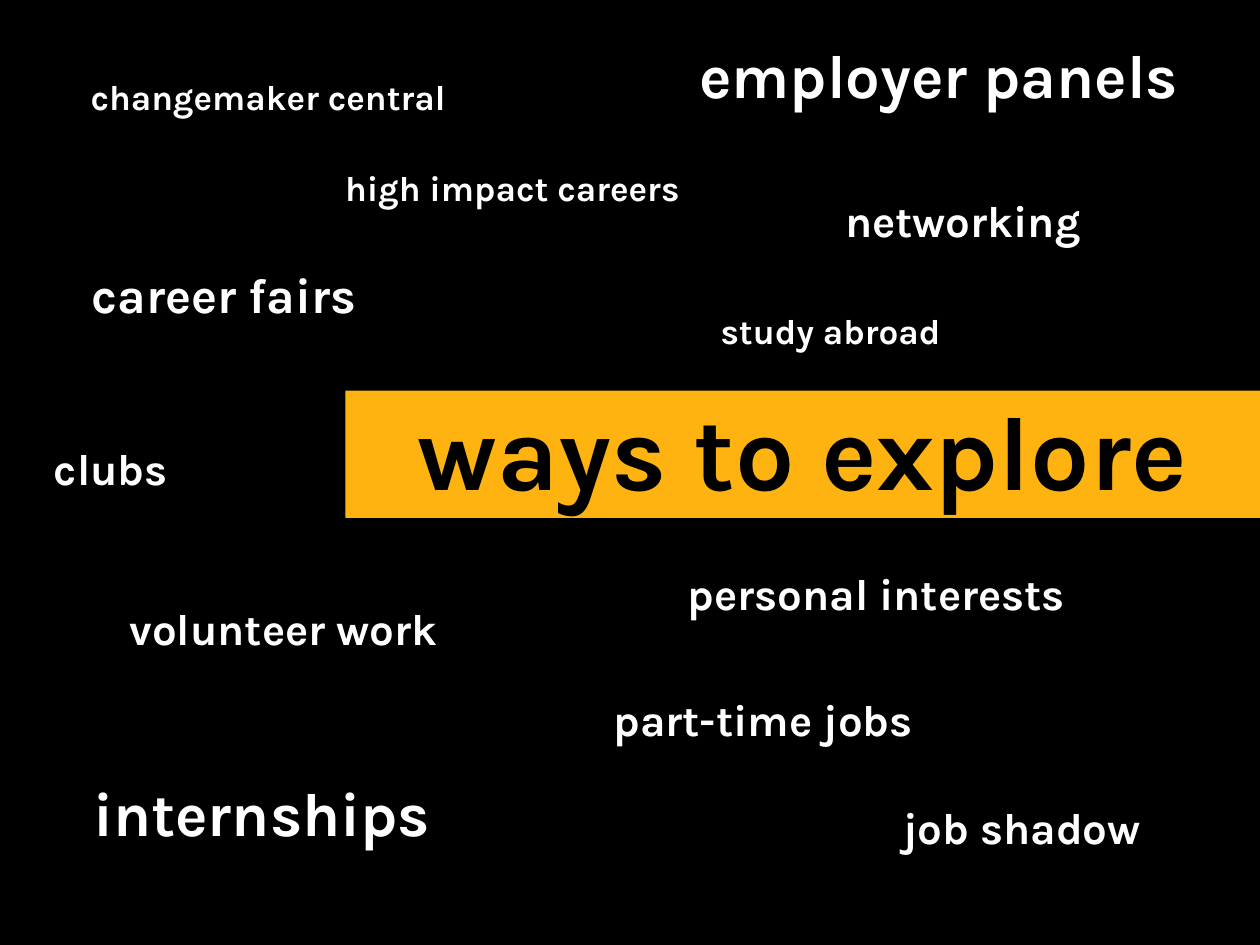
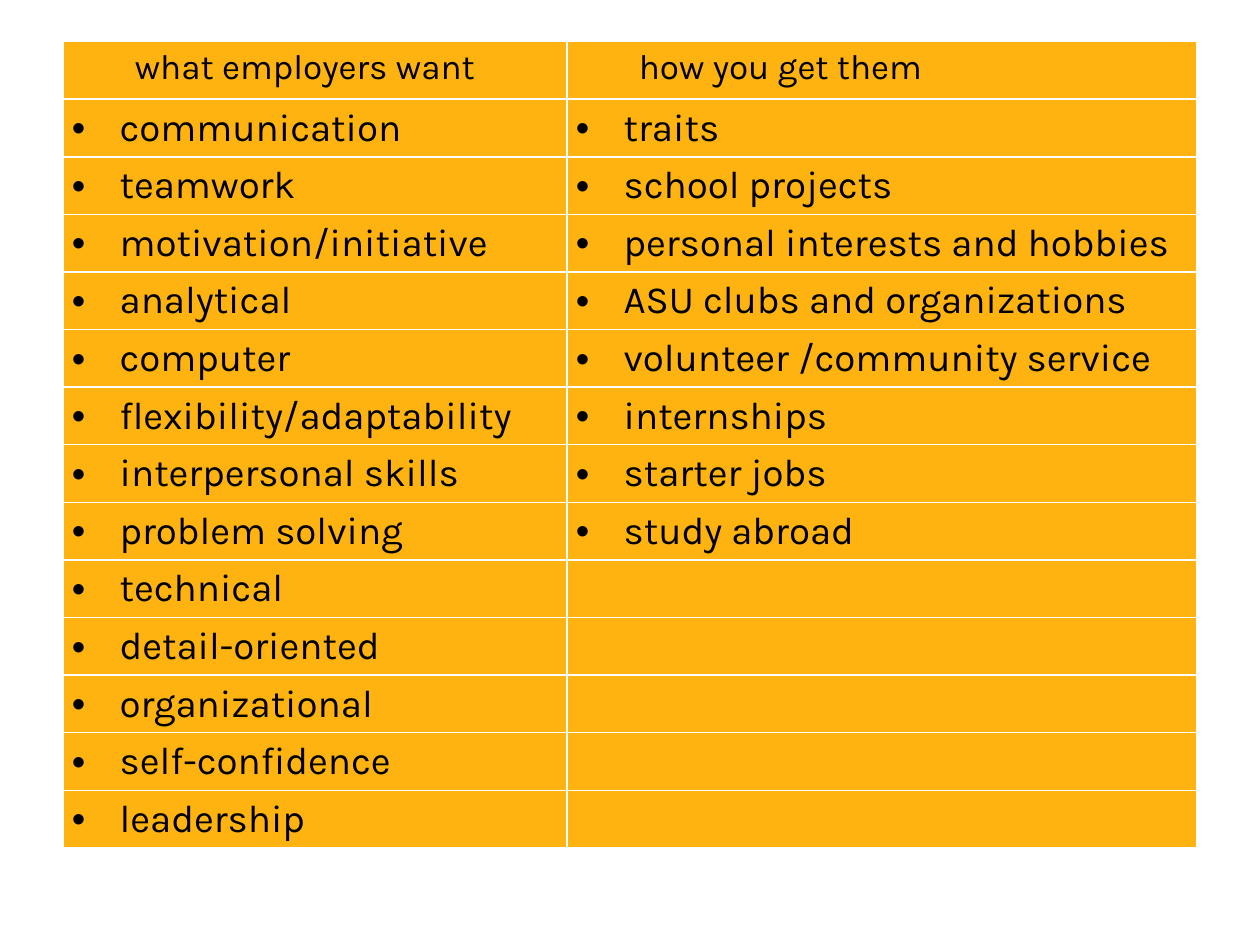
"""Build two slides: ways to explore careers, and the skills employers want."""
from itertools import zip_longest

from lxml import etree
from pptx import Presentation
from pptx.dml.color import RGBColor
from pptx.enum.text import MSO_AUTO_SIZE, PP_ALIGN
from pptx.oxml.ns import qn
from pptx.util import Inches, Pt

CENTER = PP_ALIGN.CENTER
GROW = MSO_AUTO_SIZE.SHAPE_TO_FIT_TEXT
FONT = "Karla"
COLORS = {"black": "000000", "white": "FFFFFF", "gold": "FFB310"}


def paint(fill, color):
    fill.solid()
    fill.fore_color.rgb = RGBColor.from_string(COLORS[color])


def add_run(para, text, size, color, bold=False):
    span = para.add_run()
    span.text = text
    span.font.name = FONT
    span.font.size = Pt(size)
    span.font.bold = bold
    span.font.color.rgb = RGBColor.from_string(COLORS[color])


deck = Presentation()
deck.slide_width = Inches(10)
deck.slide_height = Inches(7.5)

page = deck.slides.add_slide(deck.slide_layouts[5])
paint(page.background.fill, "black")

title = page.shapes.title
title.left, title.top = Inches(2.74), Inches(3.1)
title.width, title.height = Inches(7.26), Inches(1.01)
paint(title.fill, "gold")
title.text_frame.word_wrap = True
title.text_frame.auto_size = GROW
para = title.text_frame.paragraphs[0]
para.alignment = CENTER
para.line_spacing = Pt(65)
add_run(para, "ways to explore", 60, "black", bold=True)

box_heights = {20: 0.44, 25: 0.52, 28: 0.57, 35: 0.69}
ideas = [
    ("internships", 35, 0.64, 6.1, 2.93),
    ("volunteer work", 25, 0.93, 4.73, 2.93),
    ("employer panels", 35, 5.45, 0.25, 4.49),
    ("part-time jobs", 25, 4.77, 5.45, 2.93),
    ("networking", 25, 6.61, 1.49, 2.93),
    ("changemaker central", 20, 0.62, 0.55, 5.12),
    ("career fairs", 28, 0.63, 2.05, 4.69),
    ("clubs", 25, 0.33, 3.46, 2.2),
    ("study abroad", 20, 5.62, 2.41, 2.89),
    ("job shadow", 25, 7.07, 6.31, 2.93),
    ("personal interests", 25, 5.36, 4.45, 3.43),
    ("high impact careers", 20, 2.64, 1.27, 5.12),
]
for text, size, left, top, width in ideas:
    box = page.shapes.add_textbox(
        Inches(left), Inches(top), Inches(width), Inches(box_heights[size]))
    box.text_frame.word_wrap = True
    box.text_frame.auto_size = GROW
    add_run(box.text_frame.paragraphs[0], text, size, "white", bold=True)

page = deck.slides.add_slide(deck.slide_layouts[6])
skills = [
    "what employers want", "communication", "teamwork", "motivation/initiative",
    "analytical", "computer", "flexibility/adaptability", "interpersonal skills",
    "problem solving", "technical", "detail-oriented", "organizational",
    "self-confidence", "leadership",
]
sources = [
    "how you get them", "traits", "school projects",
    "personal interests and hobbies", "ASU clubs and organizations",
    "volunteer /community service", "internships", "starter jobs", "study abroad",
]
table = page.shapes.add_table(
    len(skills), 2, Inches(0.5), Inches(0.33), Inches(9), Inches(6.4)).table
table.first_row = False
table.horz_banding = False
table.columns[0].width = Inches(4)
table.columns[1].width = Inches(5)

for row, texts in enumerate(zip_longest(skills, sources, fillvalue="")):
    for column, text in enumerate(texts):
        cell = table.cell(row, column)
        cell_properties = cell._tc.get_or_add_tcPr()
        for side in ("lnL", "lnR", "lnT", "lnB"):
            border = etree.SubElement(cell_properties, qn(f"a:{side}"), w=str(Pt(1)))
            line_fill = etree.SubElement(border, qn("a:solidFill"))
            etree.SubElement(line_fill, qn("a:srgbClr"), val=COLORS["white"])
        paint(cell.fill, "gold")
        if not text:
            continue
        cell.margin_left = cell.margin_right = Inches(0.07)
        cell.margin_top = cell.margin_bottom = 0
        para = cell.text_frame.paragraphs[0]
        layout = para._p.get_or_add_pPr()
        if row == 0:
            layout.set("marL", str(Inches(0.5)))
            layout.set("indent", "0")
        else:
            layout.set("marL", str(Inches(0.38)))
            layout.set("indent", str(-Inches(0.38)))
            etree.SubElement(layout, qn("a:buFont"), typeface="Arial")
            etree.SubElement(layout, qn("a:buChar"), char="•")
            tabs = etree.SubElement(layout, qn("a:tabLst"))
            etree.SubElement(tabs, qn("a:tab"), pos=str(Inches(0.5)), algn="l")
        para.line_spacing = 1.15
        add_run(para, text, 20 if row == 0 else 22, "black")

deck.save("out.pptx")
